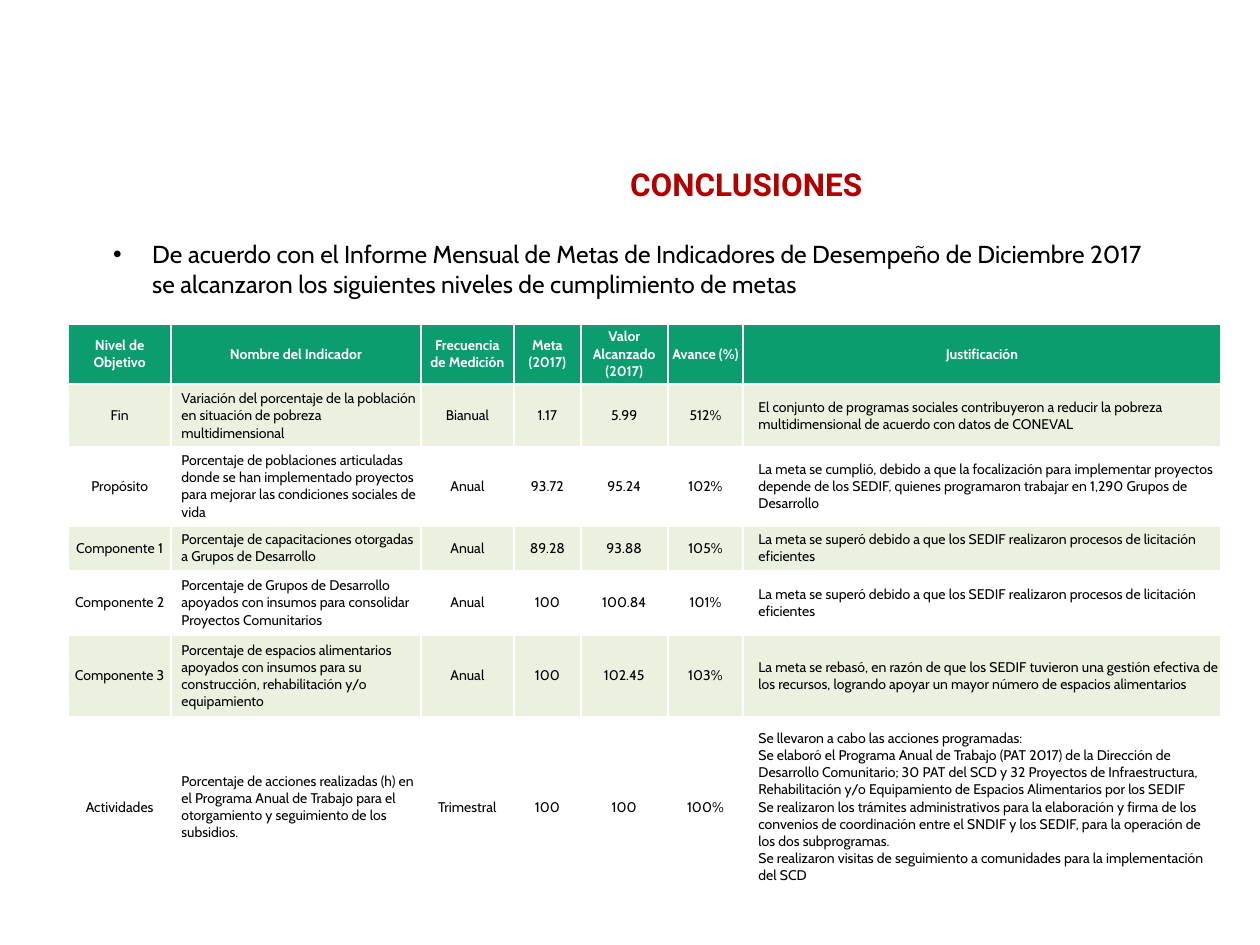
import pptx
import pptx.dml.color
import pptx.enum.text
import pptx.oxml
import pptx.oxml.ns
import pptx.util
from pptx.util import Inches

RED = pptx.dml.color.RGBColor(0xB0, 0x00, 0x00)
GREEN = pptx.dml.color.RGBColor(0x0B, 0x9D, 0x6F)
PALE_GREEN = pptx.dml.color.RGBColor(0xEB, 0xF1, 0xDE)
WHITE = pptx.dml.color.RGBColor(0xFF, 0xFF, 0xFF)
BLACK = pptx.dml.color.RGBColor(0x00, 0x00, 0x00)

ALIGN = pptx.enum.text.PP_ALIGN
ANCHOR = pptx.enum.text.MSO_ANCHOR
FIT_SHAPE = pptx.enum.text.MSO_AUTO_SIZE.SHAPE_TO_FIT_TEXT

COLUMN_WIDTHS = [0.82, 1.98, 0.74, 0.53, 0.69, 0.6, 3.79]
ROW_HEIGHTS = [0.48, 0.5, 0.62, 0.36, 0.51, 0.65, 1.43]
# Left indents of the left-aligned columns; the others are centred
TEXT_INDENTS = {1: 0.08, 6: 0.12}

# In cell text \v breaks a line and \n starts a paragraph
HEADER = ["Nivel de Objetivo", "Nombre del Indicador", "Frecuencia\vde Medición",
          "Meta (2017)", "Valor Alcanzado (2017)", "Avance (%)", "Justificación"]
INDICATORS = [
    ["Fin",
     "Variación del porcentaje de la población en situación de pobreza multidimensional",
     "Bianual", "1.17", "5.99", "512%",
     "El conjunto de programas sociales contribuyeron a reducir la pobreza "
     "multidimensional de acuerdo con datos de CONEVAL"],
    ["Propósito",
     "Porcentaje de poblaciones articuladas donde se han implementado proyectos "
     "para mejorar las condiciones sociales de vida",
     "Anual", "93.72", "95.24", "102%",
     "La meta se cumplió, debido a que la focalización para implementar proyectos "
     "depende de los SEDIF, quienes programaron trabajar en 1,290 Grupos de Desarrollo"],
    ["Componente 1",
     "Porcentaje de capacitaciones otorgadas a Grupos de Desarrollo",
     "Anual", "89.28", "93.88", "105%",
     "La meta se superó debido a que los SEDIF realizaron procesos de licitación eficientes"],
    ["Componente 2",
     "Porcentaje de Grupos de Desarrollo apoyados con insumos para consolidar "
     "Proyectos Comunitarios",
     "Anual", "100", "100.84", "101%",
     "La meta se superó debido a que los SEDIF realizaron procesos de licitación eficientes"],
    ["Componente 3",
     "Porcentaje de espacios alimentarios apoyados con insumos para su construcción, "
     "rehabilitación y/o equipamiento",
     "Anual", "100", "102.45", "103%",
     "La meta se rebasó, en razón de que los SEDIF tuvieron una gestión efectiva de los "
     "recursos, logrando apoyar un mayor número de espacios alimentarios"],
    ["Actividades",
     "Porcentaje de acciones realizadas (h) en el Programa Anual de Trabajo para el "
     "otorgamiento y seguimiento de los subsidios.",
     "Trimestral", "100", "100", "100%",
     "Se llevaron a cabo las acciones programadas:\v"
     "Se elaboró el Programa Anual de Trabajo (PAT 2017) de la Dirección de Desarrollo "
     "Comunitario; 30 PAT del SCD y 32 Proyectos de Infraestructura, Rehabilitación y/o "
     "Equipamiento de Espacios Alimentarios por los SEDIF\v"
     "Se realizaron los trámites administrativos para la elaboración y firma de los "
     "convenios de coordinación entre el SNDIF y los SEDIF, para la operación de los dos "
     "subprogramas.\n"
     "Se realizaron visitas de seguimiento a comunidades para la implementación del SCD"],
]


def set_font(paragraph, name, size, color, bold=False):
    font = paragraph.font
    font.name = name
    font.size = pptx.util.Pt(size)
    font.bold = bold
    font.color.rgb = color


def set_indent(paragraph, left, first_line=0):
    properties = paragraph._p.get_or_add_pPr()
    properties.set("marL", str(Inches(left)))
    properties.set("indent", str(Inches(first_line)))
    return properties


def format_title(slide):
    title = slide.shapes.title
    title.left, title.top = Inches(0.83), Inches(1.14)
    title.width, title.height = Inches(8.34), Inches(0.5)
    frame = title.text_frame
    frame.text = "CONCLUSIONES"
    frame.auto_size = FIT_SHAPE
    frame.vertical_anchor = ANCHOR.TOP
    paragraph = frame.paragraphs[0]
    paragraph.alignment = ALIGN.CENTER
    paragraph.line_spacing = 1.4
    set_font(paragraph, "Roboto", 18, RED, bold=True)
    paragraph.runs[0]._r.get_or_add_rPr().set("cap", "small")


def add_bullet_text(slide, text):
    box = slide.shapes.add_textbox(Inches(0.8), Inches(1.85), Inches(8.42), Inches(0.57))
    frame = box.text_frame
    frame.word_wrap = True
    frame.auto_size = FIT_SHAPE
    paragraph = frame.paragraphs[0]
    paragraph.text = text
    paragraph.space_after = pptx.util.Pt(6)
    properties = set_indent(paragraph, 0.31, -0.31)
    for tag, name, value in (("a:buFont", "typeface", "Arial"), ("a:buChar", "char", "•")):
        bullet = pptx.oxml.parse_xml(f"<{tag} {pptx.oxml.ns.nsdecls('a')} {name}='{value}'/>")
        properties.append(bullet)
    set_font(paragraph, "Cabin", 14, BLACK)


def set_borders(cell):
    properties = cell._tc.get_or_add_tcPr()
    for side in ("lnL", "lnR", "lnT", "lnB"):
        properties.append(pptx.oxml.parse_xml(
            f"<a:{side} {pptx.oxml.ns.nsdecls('a')} w='{pptx.util.Pt(1.5)}'>"
            f"<a:solidFill><a:srgbClr val='{WHITE}'/></a:solidFill></a:{side}>"))


def fill_cell(cell, text, fill, color, bold, indent):
    set_borders(cell)
    cell.fill.solid()
    cell.fill.fore_color.rgb = fill
    cell.margin_left = cell.margin_right = cell.margin_top = cell.margin_bottom = 0
    cell.vertical_anchor = ANCHOR.MIDDLE
    cell.text_frame.text = text
    for paragraph in cell.text_frame.paragraphs:
        if indent is None:
            paragraph.alignment = ALIGN.CENTER
        else:
            set_indent(paragraph, indent)
        set_font(paragraph, "Cabin", 8, color, bold)


def add_indicator_table(slide):
    rows = [HEADER] + INDICATORS
    frame = slide.shapes.add_table(len(rows), len(HEADER), Inches(0.54), Inches(2.57),
                                   Inches(9.16), Inches(4.55))
    table = frame.table
    for column, width in zip(table.columns, COLUMN_WIDTHS):
        column.width = Inches(width)
    for row, height in zip(table.rows, ROW_HEIGHTS):
        row.height = Inches(height)
    for i, texts in enumerate(rows):
        for j, text in enumerate(texts):
            if i == 0:
                fill_cell(table.cell(i, j), text, GREEN, WHITE, True, None)
            else:
                fill = PALE_GREEN if i % 2 else WHITE
                fill_cell(table.cell(i, j), text, fill, BLACK, False, TEXT_INDENTS.get(j))


def main():
    presentation = pptx.Presentation()
    presentation.slide_width, presentation.slide_height = Inches(10), Inches(7.5)
    slide = presentation.slides.add_slide(presentation.slide_layouts[5])

    # Heading and introduction
    format_title(slide)
    add_bullet_text(slide, "De acuerdo con el Informe Mensual de Metas de Indicadores de "
                           "Desempeño de Diciembre 2017 se alcanzaron los siguientes "
                           "niveles de cumplimiento de metas")

    # Indicator results
    add_indicator_table(slide)

    presentation.save("out.pptx")


if __name__ == "__main__":
    main()
